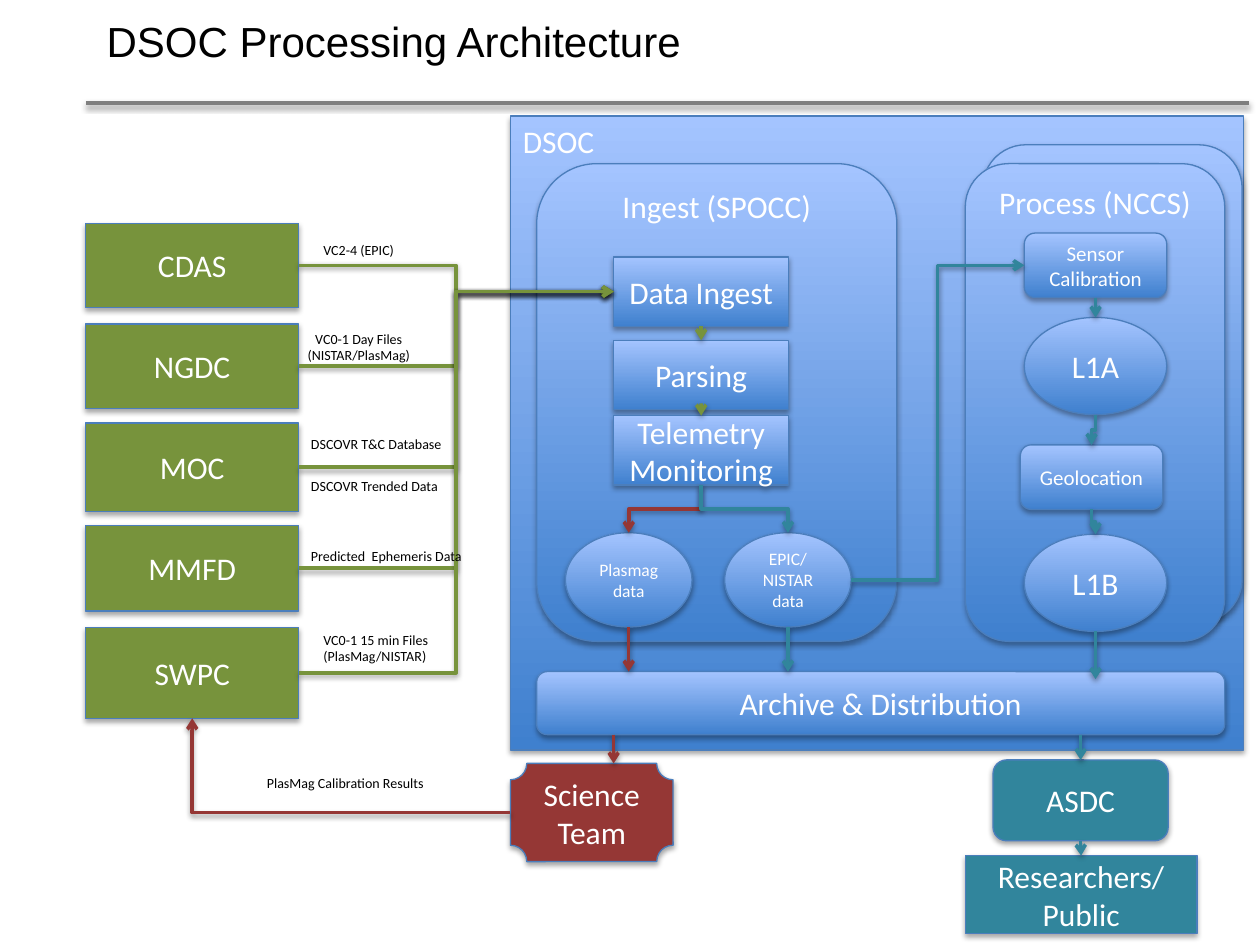
from collections import namedtuple
from dataclasses import dataclass

from lxml import etree
from pptx import Presentation
from pptx import util as u
from pptx.dml.color import RGBColor
from pptx.enum import shapes, text
from pptx.oxml.ns import qn

Kind = shapes.MSO_SHAPE
Link = shapes.MSO_CONNECTOR
Align = text.PP_ALIGN
Anchor = text.MSO_ANCHOR
TOP, LEFT, BOTTOM, RIGHT = range(4)


@dataclass(frozen=True)
class Theme:
    heading: str = "Arial"
    body: str = "Calibri"
    title: int = 24
    large: int = 18
    medium: int = 12
    small: int = 10
    label: int = 8
    ink: str = "000000"
    white: str = "FFFFFF"
    rule: str = "7F7F7F"
    outline: str = "4B7EBC"
    deep: str = "3F80CE"
    pale: str = "A4C4FF"
    green: str = "77933C"
    red: str = "953735"
    teal: str = "31859C"


THEME = Theme()


class Box(namedtuple("Box", "left top width height")):
    def area(self, left, top, width, height):
        return Box(self.left + left, self.top + top, width, height)

    def emu(self):
        return [u.Cm(value) for value in self]


def rgb(colour):
    return RGBColor.from_string(colour)


def cast_shadow(effects, alpha, distance):
    shadow = etree.SubElement(effects, qn("a:outerShdw"), blurRad=str(u.Pt(3.1)),
                              dist=str(u.Pt(distance)), dir="5400000", rotWithShape="0")
    colour = etree.SubElement(shadow, qn("a:srgbClr"), val=THEME.ink)
    etree.SubElement(colour, qn("a:alpha"), val=str(alpha * 1000))


def write(frame, wording, size, colour, align, font=THEME.body):
    for index, line in enumerate(wording.split("\n")):
        paragraph = frame.add_paragraph() if index else frame.paragraphs[0]
        paragraph.alignment = align
        run = paragraph.add_run()
        run.text = line
        run.font.name = font
        run.font.size = u.Pt(size)
        run.font.color.rgb = rgb(colour)


def add_node(slide, kind, box, wording="", colour=None, size=THEME.large,
             anchor=Anchor.MIDDLE, align=Align.CENTER):
    shape = slide.shapes.add_shape(kind, *box.emu())
    if colour:
        shape.fill.solid()
        shape.fill.fore_color.rgb = rgb(colour)
    else:
        shape.fill.gradient()
        shape.fill.gradient_angle = 90
        for stop, shade in zip(shape.fill.gradient_stops, (THEME.deep, THEME.pale)):
            stop.color.rgb = rgb(shade)
    shape.line.color.rgb = rgb(THEME.outline)
    shape.line.width = u.Pt(0.75)
    shape.shadow.inherit = False
    cast_shadow(shape.element.spPr.find(qn("a:effectLst")), 35, 1.8)
    shape.text_frame.word_wrap = True
    shape.text_frame.vertical_anchor = anchor
    if wording:
        write(shape.text_frame, wording, size, THEME.white, align)
    return shape


def add_label(slide, box, wording, size=THEME.label, align=Align.LEFT, wrap=False,
              font=THEME.body):
    label = slide.shapes.add_textbox(*box.emu())
    label.text_frame.word_wrap = wrap
    write(label.text_frame, wording, size, THEME.ink, align, font)


def side(shape, edge):
    across = {LEFT: 0, RIGHT: shape.width}.get(edge, shape.width // 2)
    down = {TOP: 0, BOTTOM: shape.height}.get(edge, shape.height // 2)
    return shape.left + across, shape.top + down


def add_line(slide, begin, end, colour, kind=Link.STRAIGHT, arrow=True):
    line = slide.shapes.add_connector(kind, *begin, *end)
    line.line.color.rgb = rgb(colour)
    line.line.width = u.Pt(2)
    if arrow:
        etree.SubElement(line.get_or_add_ln(), qn("a:tailEnd"), type="arrow")
    cast_shadow(etree.SubElement(line.element.spPr, qn("a:effectLst")), 38, 1.6)
    return line


def add_elbow(slide, begin, end, colour, turn=0):
    middle_x, middle_y = (begin[0] + end[0]) / 2, (begin[1] + end[1]) / 2
    half_x, half_y = (end[0] - begin[0]) / 2, (end[1] - begin[1]) / 2
    run, rise = {0: (half_x, half_y), 90: (half_y, -half_x), 180: (-half_x, -half_y)}[turn]
    elbow = add_line(slide, (int(middle_x - run), int(middle_y - rise)),
                     (int(middle_x + run), int(middle_y + rise)), colour, Link.ELBOW)
    if turn:
        elbow.element.spPr.find(qn("a:xfrm")).set("rot", str(turn * 60000))
    return elbow


def add_drop(slide, shape, target, colour):
    x, y = side(shape, BOTTOM)
    return add_line(slide, (x, y), (x, target), colour)


def add_joined(slide, upper, lower, colour):
    arrow = add_line(slide, side(upper, BOTTOM), side(lower, TOP), colour)
    arrow.begin_connect(upper, BOTTOM)
    arrow.end_connect(lower, TOP)


def draw_header(slide, box):
    add_label(slide, box.area(0.17, 0, 19.05, 2.24), "DSOC Processing Architecture",
              THEME.title, wrap=True, font=THEME.heading)
    y = u.Cm(box.top + box.height)
    add_line(slide, (u.Cm(box.left), y), (u.Cm(box.left + box.width), y), THEME.rule, arrow=False)


def draw_ingest(slide, box):
    add_node(slide, Kind.ROUNDED_RECTANGLE, box, "Ingest (SPOCC)", anchor=Anchor.TOP)
    steps = [add_node(slide, Kind.RECTANGLE, box.area(1.55, top, 3.53, 1.4), name)
             for name, top in (("Data Ingest", 1.88), ("Parsing", 3.56),
                               ("Telemetry Monitoring", 5.08))]
    stores = [add_node(slide, Kind.OVAL, box.area(left, 7.44, 2.55, 1.9), name, size=THEME.small)
              for name, left in (("Plasmag data", 0.58), ("EPIC/\nNISTAR data", 3.79))]
    for upper, lower in zip(steps, steps[1:]):
        add_joined(slide, upper, lower, THEME.green)
    for store, colour in zip(stores, (THEME.red, THEME.teal)):
        add_elbow(slide, side(steps[-1], BOTTOM), side(store, TOP), colour, 90)
    return steps[0], stores


def draw_process(slide, box):
    add_node(slide, Kind.ROUNDED_RECTANGLE, box.area(0.35, -0.38, box.width, box.height))
    add_node(slide, Kind.ROUNDED_RECTANGLE, box, "Process (NCCS)", anchor=Anchor.TOP)
    block, level = (Kind.ROUNDED_RECTANGLE, 1.3, THEME.medium), (Kind.OVAL, 1.96, THEME.large)
    rows = (("Sensor Calibration", block, 1.19, 1.4), ("L1A", level, 1.19, 3.1),
            ("Geolocation", block, 1.11, 5.67), ("L1B", level, 1.19, 7.47))
    nodes = [add_node(slide, kind, box.area(left, top, 2.87, height), name, size=size)
             for name, (kind, height, size), left, top in rows]
    add_joined(slide, nodes[0], nodes[1], THEME.teal)
    for upper, lower in zip(nodes[1:], nodes[2:]):
        add_elbow(slide, side(upper, BOTTOM), side(lower, TOP), THEME.teal, 90)
    return nodes[0], nodes[-1]


def draw_dsoc(slide, box):
    add_node(slide, Kind.RECTANGLE, box, "DSOC", anchor=Anchor.TOP, align=Align.LEFT)
    intake, stores = draw_ingest(slide, box.area(0.53, 0.96, 7.26, 9.63))
    archive = add_node(slide, Kind.ROUNDED_RECTANGLE, box.area(0.53, 11.2, 13.87, 1.27),
                       "Archive & Distribution")
    calibration, product = draw_process(slide, box.area(9.17, 0.96, 5.23, 9.63))
    for store, colour in zip(stores, (THEME.red, THEME.teal)):
        add_drop(slide, store, archive.top, colour)
    add_drop(slide, product, archive.top + u.Cm(0.15), THEME.teal)
    add_elbow(slide, side(stores[1], RIGHT), side(calibration, LEFT), THEME.teal)
    return intake, archive


def draw_sources(slide, box, intake):
    rows = (("CDAS", 0, 1.7), ("NGDC", 2.03, 1.7), ("MOC", 4.03, 1.78),
            ("MMFD", 6.09, 1.73), ("SWPC", 8.15, 1.83))
    for name, top, height in rows:
        source = add_node(slide, Kind.RECTANGLE, box.area(0, top, box.width, height),
                          name, THEME.green)
        add_elbow(slide, side(source, RIGHT), side(intake, LEFT), THEME.green)
    labels = (("VC2-4 (EPIC)", 4.54, 0.25, 1.96), ("DSCOVR T&C Database", 4.29, 4.16, 3.18),
              ("DSCOVR Trended Data", 4.29, 5, 3.12),
              ("Predicted  Ephemeris Data", 4.29, 6.42, 3.71),
              ("VC0-1 15 min Files\n(PlasMag/NISTAR)", 4.54, 8.1, 2.64))
    for wording, left, top, width in labels:
        add_label(slide, box.area(left, top, width, 0.61), wording)
    add_label(slide, box.area(3.88, 2.03, 3.25, 0.94), "VC0-1 Day Files (NISTAR/PlasMag)",
              align=Align.CENTER, wrap=True)
    return source


def draw_science(slide, box, archive, source):
    team = add_node(slide, Kind.PLAQUE, box, "Science Team", THEME.red)
    x = u.Cm(box.left + 2.08)
    add_line(slide, (x, archive.top + archive.height), (x, team.top), THEME.red)
    feedback = add_elbow(slide, side(team, LEFT), side(source, BOTTOM), THEME.red, 180)
    feedback.element.spPr.find(qn("a:prstGeom")).set("prst", "bentConnector2")
    add_label(slide, box.area(-5.16, 0.1, 3.73, 0.61), "PlasMag Calibration Results")


def draw_users(slide, box, archive):
    center = add_node(slide, Kind.ROUNDED_RECTANGLE, box.area(0.56, 0, 3.53, 1.63),
                      "ASDC", THEME.teal)
    public = add_node(slide, Kind.RECTANGLE, box.area(0, 1.93, box.width, 1.57),
                      "Researchers/Public", THEME.teal)
    x, y = side(center, TOP)
    arrow = add_line(slide, (x, archive.top + archive.height), (x, y), THEME.teal)
    arrow.end_connect(center, TOP)
    add_elbow(slide, side(center, BOTTOM), side(public, TOP), THEME.teal, 90)


def main():
    presentation = Presentation()
    presentation.slide_width, presentation.slide_height = u.Cm(25.4), u.Cm(19.05)
    slide = presentation.slides.add_slide(presentation.slide_layouts[6])
    draw_header(slide, Box(1.73, 0.18, 23.44, 1.9))
    intake, archive = draw_dsoc(slide, Box(10.29, 2.34, 14.78, 12.78))
    source = draw_sources(slide, Box(1.73, 4.5, 4.29, 9.98), intake)
    draw_science(slide, Box(10.29, 15.39, 3.28, 1.98), archive, source)
    draw_users(slide, Box(19.46, 15.32, 4.67, 3.5), archive)
    presentation.save("out.pptx")


if __name__ == "__main__":
    main()
